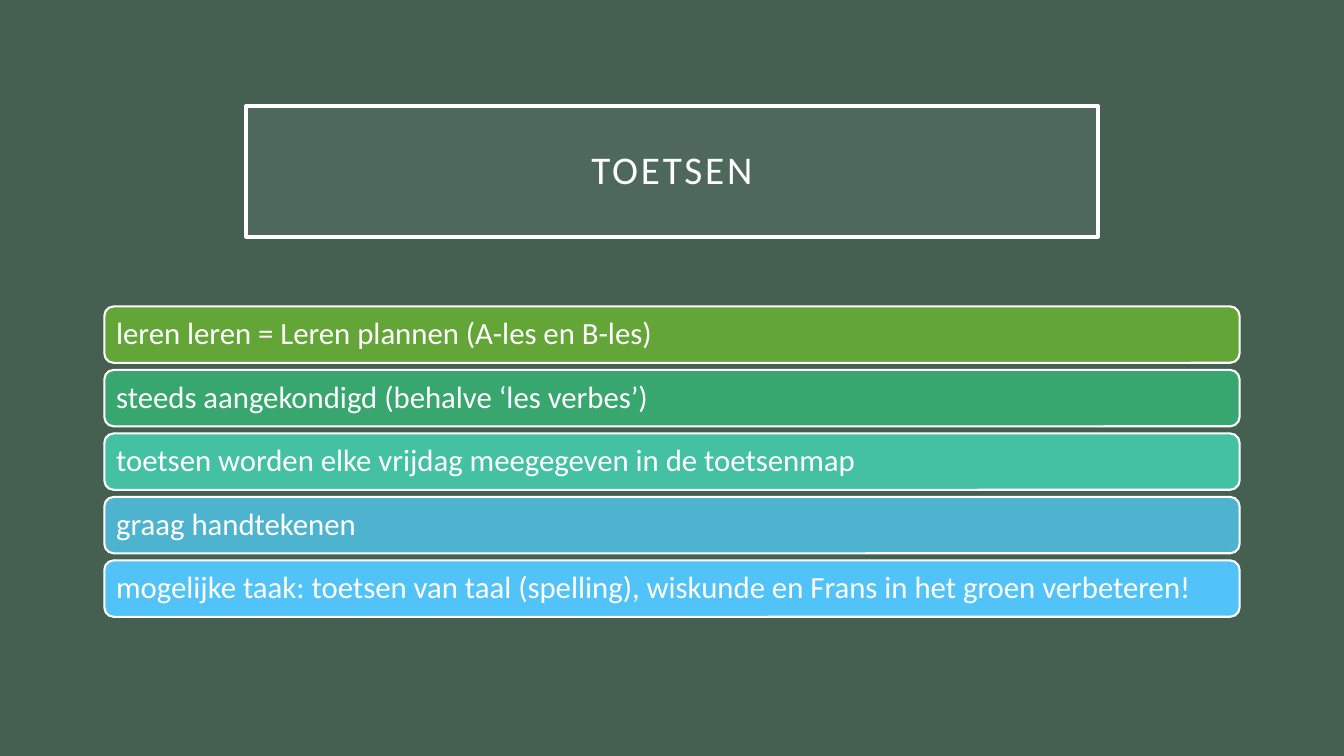
import pptx
import pptx.util
import pptx.dml.color
import pptx.enum.shapes
import pptx.enum.text
import pptx.oxml.ns
import lxml.etree
from dataclasses import dataclass

Inch = pptx.util.Inches
Align = pptx.enum.text.PP_ALIGN


@dataclass(frozen=True)
class Theme:
    font: str = "Calibri"
    back: str = "455F51"
    ink: str = "FFFFFF"
    panel: str = "87A896"
    bars: tuple = ("63A537", "37A76F", "44C1A3", "4EB3CF", "51C3F9")
    head: int = 28
    body: int = 22


THEME = Theme()
WIDE, HIGH = 13.33, 7.5
RULES = (
    "leren leren = Leren plannen (A-les en B-les)",
    "steeds aangekondigd (behalve ‘les verbes’)",
    "toetsen worden elke vrijdag meegegeven in de toetsenmap",
    "graag handtekenen",
    "mogelijke taak: toetsen van taal (spelling), wiskunde en Frans in het groen verbeteren!",
)


def color(code):
    return pptx.dml.color.RGBColor.from_string(code)


def paint(shape, fill, width, alpha=None):
    """Fill and outline a shape; alpha is the opacity in percent."""
    shape.fill.solid()
    shape.fill.fore_color.rgb = color(fill)
    shape.line.color.rgb = color(THEME.ink)
    shape.line.width = pptx.util.Pt(width)
    if alpha is not None:
        tone = shape.fill._xPr.find(".//" + pptx.oxml.ns.qn("a:srgbClr"))
        node = lxml.etree.SubElement(tone, pptx.oxml.ns.qn("a:alpha"))
        node.set("val", str(alpha * 1000))


def write(shape, text, size, align=Align.LEFT, inset=0.09, track=0):
    """Put one formatted paragraph in a shape; track is letter spacing in points."""
    frame = shape.text_frame
    frame.word_wrap = True
    frame.auto_size = pptx.enum.text.MSO_AUTO_SIZE.NONE
    frame.vertical_anchor = pptx.enum.text.MSO_ANCHOR.MIDDLE
    frame.margin_left = frame.margin_right = Inch(inset)
    frame.margin_top = frame.margin_bottom = Inch(inset)
    para = frame.paragraphs[0]
    para.alignment = align
    para.line_spacing = 0.9
    run = para.add_run()
    run.text = text
    run.font.name = THEME.font
    run.font.size = pptx.util.Pt(size)
    run.font.color.rgb = color(THEME.ink)
    if track:
        run.font._element.set("spc", str(track * 100))


def header(slide, box, text):
    """Framed title on a translucent panel."""
    title = slide.shapes.title
    title.left, title.top, title.width, title.height = map(Inch, box)
    paint(title, THEME.panel, 2.5, alpha=15)
    write(title, text, THEME.head, align=Align.CENTER, inset=0.2, track=2)


def stack(slide, box, items, gap):
    """Equal bars, one for each item, filling the box from top to bottom."""
    left, top, width, height = box
    bar = (height - gap * (len(items) - 1)) / len(items)
    for row, (text, fill) in enumerate(zip(items, THEME.bars)):
        shape = slide.shapes.add_shape(
            pptx.enum.shapes.MSO_SHAPE.ROUNDED_RECTANGLE,
            Inch(left), Inch(top + row * (bar + gap)), Inch(width), Inch(bar))
        shape.shadow.inherit = False
        paint(shape, fill, 1.5)
        write(shape, text, THEME.body)


def main():
    deck = pptx.Presentation()
    deck.slide_width, deck.slide_height = Inch(WIDE), Inch(HIGH)

    # Title-only layout on a plain background
    slide = deck.slides.add_slide(deck.slide_layouts[5])
    slide.background.fill.solid()
    slide.background.fill.fore_color.rgb = color(THEME.back)

    # Both regions are centred across the slide
    wide, span = 8.45, 11.26
    header(slide, ((WIDE - wide) / 2, HIGH * 0.14, wide, 1.3), "TOETSEN")
    stack(slide, ((WIDE - span) / 2, 3.04, span, 3.08), RULES, gap=0.07)

    deck.save("out.pptx")


if __name__ == "__main__":
    main()
